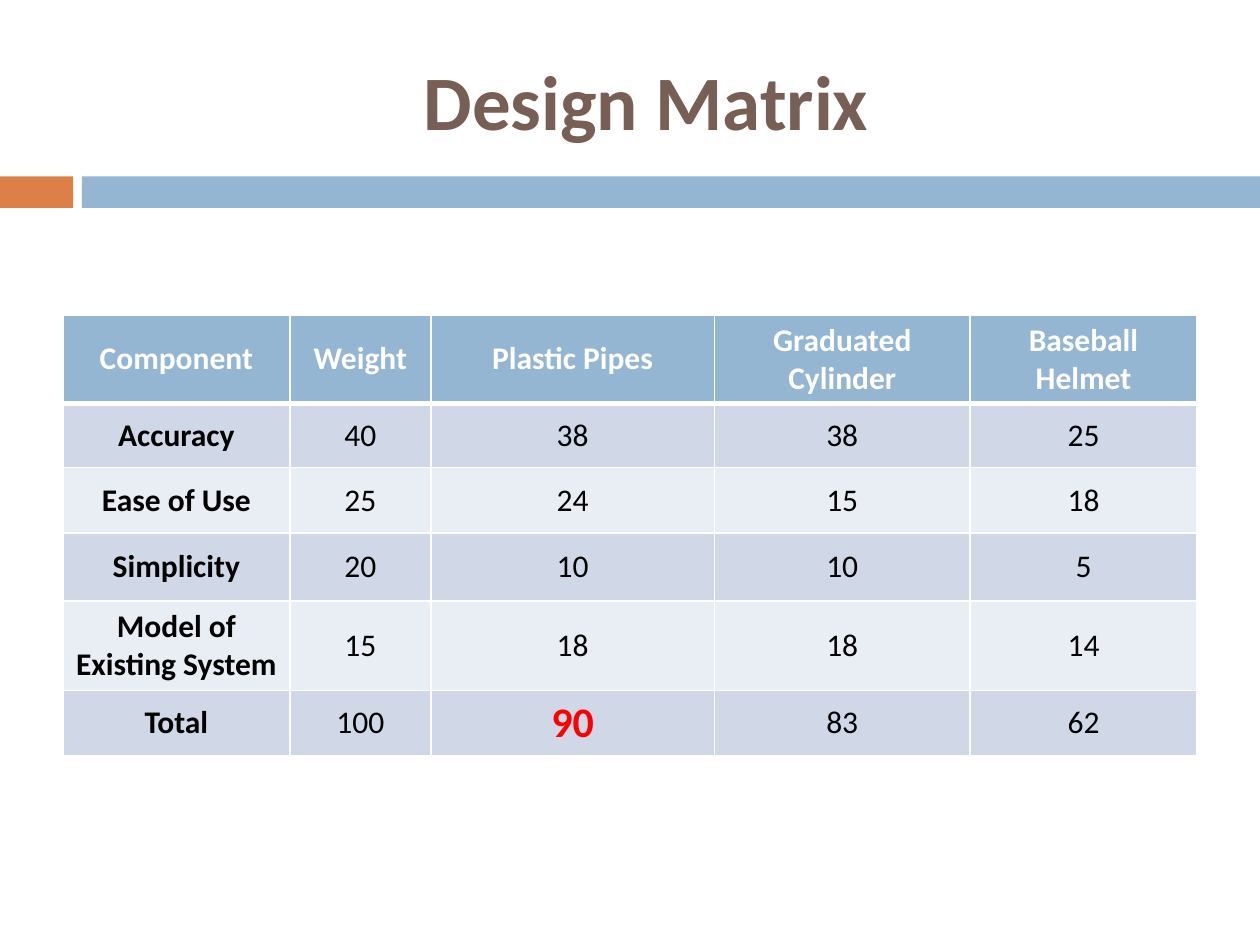
from dataclasses import dataclass

from lxml import etree
from pptx import Presentation
from pptx.dml.color import RGBColor
from pptx.enum.shapes import MSO_SHAPE
from pptx.enum.text import MSO_ANCHOR, PP_ALIGN
from pptx.oxml.ns import qn
from pptx.slide import Slide
from pptx.table import _Cell
from pptx.text.text import TextFrame
from pptx.util import Inches, Pt

RECTANGLE = MSO_SHAPE.RECTANGLE
MIDDLE = MSO_ANCHOR.MIDDLE
CENTER = PP_ALIGN.CENTER

FONT = "Calibri"
WHITE = RGBColor(0xFF, 0xFF, 0xFF)
BLACK = RGBColor(0x00, 0x00, 0x00)
RED = RGBColor(0xFF, 0x00, 0x00)
ORANGE = RGBColor(0xDD, 0x80, 0x47)
BLUE = RGBColor(0x94, 0xB6, 0xD2)
BROWN = RGBColor(0x77, 0x5F, 0x55)
BAND_DARK = RGBColor(0xD0, 0xD8, 0xE8)
BAND_LIGHT = RGBColor(0xE9, 0xED, 0xF4)


@dataclass(frozen=True)
class Bar:
    left: float
    width: float
    color: RGBColor


@dataclass(frozen=True)
class TextStyle:
    size: int
    color: RGBColor
    bold: bool


TITLE_STYLE = TextStyle(44, BROWN, True)
HEADER_STYLE = TextStyle(18, WHITE, True)
LABEL_STYLE = TextStyle(18, BLACK, True)
SCORE_STYLE = TextStyle(18, BLACK, False)
WINNER_STYLE = TextStyle(24, RED, True)

BARS = (Bar(0, 0.58, ORANGE), Bar(0.65, 9.35, BLUE))
COLUMN_WIDTHS = (1.8, 1.12, 2.25, 2.03, 1.8)
ROW_HEIGHTS = (0.7, 0.51, 0.52, 0.54, 0.71, 0.52)
MATRIX = (
    ("Component", "Weight", "Plastic Pipes", "Graduated Cylinder", "Baseball Helmet"),
    ("Accuracy", "40", "38", "38", "25"),
    ("Ease of Use", "25", "24", "15", "18"),
    ("Simplicity", "20", "10", "10", "5"),
    ("Model of Existing System", "15", "18", "18", "14"),
    ("Total", "100", "90", "83", "62"),
)
WINNER_POSITION = (5, 2)


def write_text(text_frame: TextFrame, text: str, style: TextStyle) -> None:
    paragraph = text_frame.paragraphs[0]
    paragraph.text = text
    paragraph.alignment = CENTER
    paragraph.font.name = FONT
    paragraph.font.size = Pt(style.size)
    paragraph.font.bold = style.bold
    paragraph.font.color.rgb = style.color


def add_bar(slide: Slide, bar: Bar) -> None:
    shape = slide.shapes.add_shape(
        RECTANGLE, Inches(bar.left), Inches(1.4), Inches(bar.width), Inches(0.25)
    )
    shape.shadow.inherit = False
    shape.fill.solid()
    shape.fill.fore_color.rgb = bar.color
    shape.line.fill.background()


def add_title(slide: Slide) -> None:
    title = slide.shapes.add_textbox(Inches(0.67), Inches(0.25), Inches(8.92), Inches(1.08))
    title.text_frame.word_wrap = True
    title.text_frame.vertical_anchor = MIDDLE
    write_text(title.text_frame, "Design Matrix", TITLE_STYLE)


def set_borders(cell: _Cell, row: int) -> None:
    properties = cell._tc.get_or_add_tcPr()
    widths = {"lnL": 1, "lnR": 1, "lnT": 3 if row == 1 else 1, "lnB": 3 if row == 0 else 1}
    for tag, width in widths.items():
        border = etree.SubElement(properties, qn(f"a:{tag}"), w=str(Pt(width)))
        fill = etree.SubElement(border, qn("a:solidFill"))
        etree.SubElement(fill, qn("a:srgbClr"), val=str(WHITE))


def cell_style(row: int, column: int) -> TextStyle:
    if row == 0:
        return HEADER_STYLE
    if (row, column) == WINNER_POSITION:
        return WINNER_STYLE
    return LABEL_STYLE if column == 0 else SCORE_STYLE


def row_color(row: int) -> RGBColor:
    if row == 0:
        return BLUE
    return BAND_DARK if row % 2 else BAND_LIGHT


def add_matrix(slide: Slide) -> None:
    table = slide.shapes.add_table(
        len(MATRIX), len(COLUMN_WIDTHS), Inches(0.5), Inches(2.5), Inches(9), Inches(3.5)
    ).table
    for column, width in zip(table.columns, COLUMN_WIDTHS):
        column.width = Inches(width)
    for row, height in zip(table.rows, ROW_HEIGHTS):
        row.height = Inches(height)
    for row_index, texts in enumerate(MATRIX):
        for column_index, text in enumerate(texts):
            cell = table.cell(row_index, column_index)
            cell.vertical_anchor = MIDDLE
            set_borders(cell, row_index)
            cell.fill.solid()
            cell.fill.fore_color.rgb = row_color(row_index)
            write_text(cell.text_frame, text, cell_style(row_index, column_index))


def main() -> None:
    presentation = Presentation()
    presentation.slide_width = Inches(10)
    presentation.slide_height = Inches(7.5)
    slide = presentation.slides.add_slide(presentation.slide_layouts[6])
    for bar in BARS:
        add_bar(slide, bar)
    add_title(slide)
    add_matrix(slide)
    presentation.save("out.pptx")


if __name__ == "__main__":
    main()
